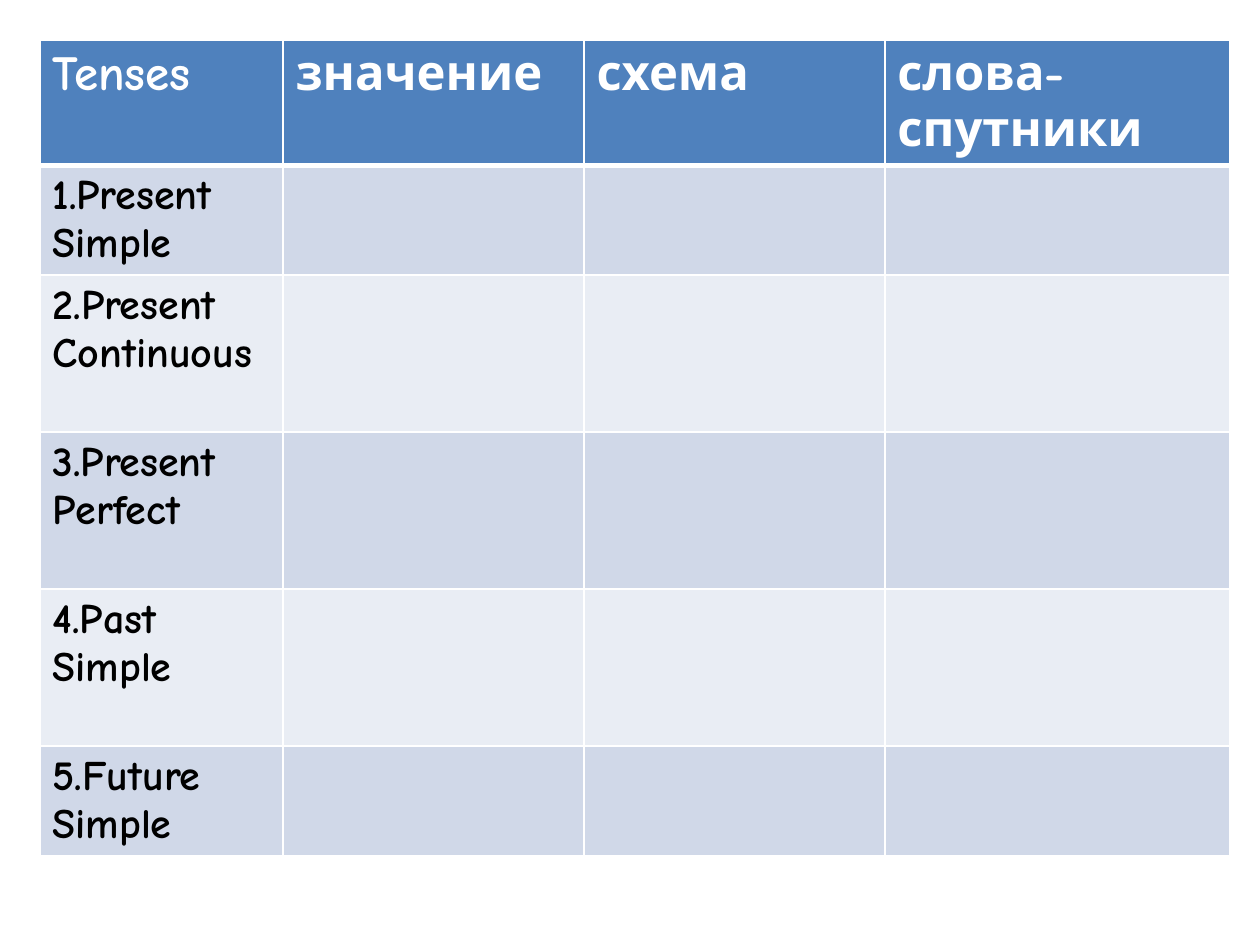
"""Build a slide with a blank worksheet table of English tenses."""
from dataclasses import dataclass

from lxml import etree
from pptx import Presentation
from pptx.dml.color import RGBColor
from pptx.oxml.ns import qn
from pptx.util import Emu, Pt

PX = 914400 / 126
FONT = "Comic Neue"
COLORS = {
    "header": "4F81BD",
    "odd": "D0D8E8",
    "even": "E9EDF4",
    "white": "FFFFFF",
    "black": "000000",
}
LEFT, TOP = 40, 40
COL_WIDTHS = [243, 301, 301, 345]


@dataclass(frozen=True)
class RowStyle:
    fill: str
    color: str
    size: int
    bottom: int


@dataclass(frozen=True)
class Row:
    height: int
    texts: tuple[str, ...]
    style: RowStyle


HEADER = RowStyle("header", "white", 28, 3)
ODD = RowStyle("odd", "black", 24, 1)
EVEN = RowStyle("even", "black", 24, 1)

ROWS = [
    Row(124, ("Tenses", "значение", "схема", "слова-спутники"), HEADER),
    Row(110, ("1.Present Simple",), ODD),
    Row(157, ("2.Present Continuous",), EVEN),
    Row(157, ("3.Present Perfect",), ODD),
    Row(157, ("4.Past\nSimple",), EVEN),
    Row(109, ("5.Future Simple",), ODD),
]


def px(n: int) -> Emu:
    return Emu(round(n * PX))


def set_borders(cell, bottom: int) -> None:
    tcPr = cell._tc.get_or_add_tcPr()
    for i, (side, width) in enumerate(zip("LRTB", (1, 1, 1, bottom))):
        ln = etree.Element(qn(f"a:ln{side}"), w=str(Pt(width)))
        fill = etree.SubElement(ln, qn("a:solidFill"))
        etree.SubElement(fill, qn("a:srgbClr"), val=COLORS["white"])
        tcPr.insert(i, ln)


def write_text(cell, text: str, style: RowStyle) -> None:
    tf = cell.text_frame
    for i, line in enumerate(text.split("\n")):
        p = tf.add_paragraph() if i else tf.paragraphs[0]
        r = p.add_run()
        r.text = line
        r.font.name = FONT
        r.font.size = Pt(style.size)
        r.font.bold = True
        r.font.color.rgb = RGBColor.from_string(COLORS[style.color])


def draw_table(s, rows: list[Row], widths: list[int]) -> None:
    height = sum(row.height for row in rows)
    table = s.shapes.add_table(
        len(rows), len(widths), px(LEFT), px(TOP), px(sum(widths)), px(height)
    ).table
    for col, width in zip(table.columns, widths):
        col.width = px(width)
    for tr, row in zip(table.rows, rows):
        tr.height = px(row.height)
        for cell in tr.cells:
            cell.fill.solid()
            cell.fill.fore_color.rgb = RGBColor.from_string(COLORS[row.style.fill])
            set_borders(cell, row.style.bottom)
        for cell, text in zip(tr.cells, row.texts):
            write_text(cell, text, row.style)


def main() -> None:
    prs = Presentation()
    prs.slide_width, prs.slide_height = px(1260), px(945)
    s = prs.slides.add_slide(prs.slide_layouts[6])
    draw_table(s, ROWS, COL_WIDTHS)
    prs.save("out.pptx")


if __name__ == "__main__":
    main()
